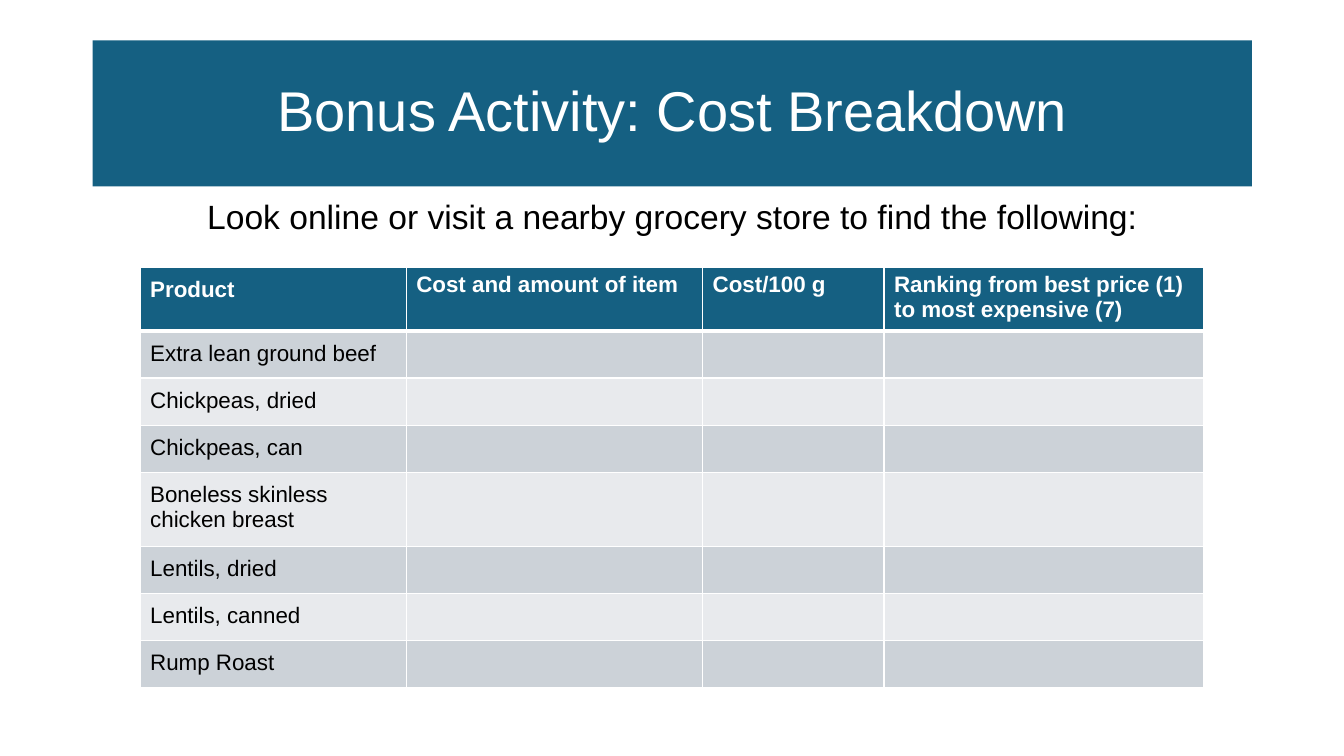
"""Build the grocery cost breakdown slide."""
from dataclasses import dataclass

from lxml import etree
from pptx import Presentation
from pptx.dml.color import RGBColor
from pptx.enum.shapes import MSO_SHAPE
from pptx.enum.text import MSO_ANCHOR, PP_ALIGN
from pptx.oxml.ns import qn
from pptx.util import Pt

RECT = MSO_SHAPE.RECTANGLE
TOP, MIDDLE = MSO_ANCHOR.TOP, MSO_ANCHOR.MIDDLE
CENTER = PP_ALIGN.CENTER
FONT = "Arial"
TEAL, WHITE, BLACK = "156082", "FFFFFF", "000000"
BANDS = ("CCD2D8", "E8EAED")
PAD = 7.2
ROW = 29.5
WIDTHS = (190.1, 211.7, 129.6, 228.2)
HEADS = (
    "Product",
    "Cost and amount of item",
    "Cost/100 g",
    "Ranking from best price (1) to most expensive (7)",
)
FOODS = (
    "Extra lean ground beef",
    "Chickpeas, dried",
    "Chickpeas, can",
    "Boneless skinless chicken breast",
    "Lentils, dried",
    "Lentils, canned",
    "Rump Roast",
)


@dataclass
class Banner:
    text: str
    left: float
    top: float
    width: float
    height: float
    size: float
    ink: str
    anchor: MSO_ANCHOR
    fill: str = ""


BANNERS = (
    Banner("Bonus Activity: Cost Breakdown",
           66.2, 28.8, 828, 104.4, 40, WHITE, MIDDLE, TEAL),
    Banner("Look online or visit a nearby grocery store to find the following:",
           84.2, 139.7, 792, 45.4, 24, BLACK, TOP),
)


def color(code: str) -> RGBColor:
    return RGBColor.from_string(code)


def style(frame, size: float, ink: str, bold: bool = False) -> None:
    for run in frame.paragraphs[0].runs:
        font = run.font
        font.name, font.size, font.bold = FONT, Pt(size), bold
        font.color.rgb = color(ink)


def add_banner(slide, item: Banner) -> None:
    area = [Pt(n) for n in (item.left, item.top, item.width, item.height)]
    if item.fill:
        shape = slide.shapes.add_shape(RECT, *area)
        shape.shadow.inherit = False
        shape.fill.solid()
        shape.fill.fore_color.rgb = color(item.fill)
        shape.line.fill.background()
    else:
        shape = slide.shapes.add_textbox(*area)
    frame = shape.text_frame
    frame.word_wrap = True
    frame.vertical_anchor = item.anchor
    frame.text = item.text
    line = frame.paragraphs[0]
    line.alignment, line.line_spacing = CENTER, 0.9
    style(frame, item.size, item.ink)


def add_edges(cell, base: float) -> None:
    props = cell._tc.get_or_add_tcPr()
    for side, width in (("L", 1), ("R", 1), ("T", 1), ("B", base)):
        edge = etree.SubElement(props, qn(f"a:ln{side}"), w=str(Pt(width)))
        fill = etree.SubElement(edge, qn("a:solidFill"))
        etree.SubElement(fill, qn("a:srgbClr"), val=WHITE)


def add_cell(cell, text: str, row: int, col: int) -> None:
    head = row == 0
    add_edges(cell, 3 if head else 1)
    cell.fill.solid()
    cell.fill.fore_color.rgb = color(TEAL if head else BANDS[(row - 1) % 2])
    if col == 0:
        cell.margin_top = cell.margin_bottom = Pt(PAD)
    if text:
        cell.text_frame.text = text
        style(cell.text_frame, 16, WHITE if head else BLACK, head)


def add_grid(slide) -> None:
    rows = [HEADS] + [(food, "", "", "") for food in FOODS]
    table = slide.shapes.add_table(
        len(rows), len(WIDTHS), Pt(100.1), Pt(190.8),
        Pt(sum(WIDTHS)), Pt(ROW * len(rows))).table
    for column, width in zip(table.columns, WIDTHS):
        column.width = Pt(width)
    for r, texts in enumerate(rows):
        table.rows[r].height = Pt(ROW)
        for c, text in enumerate(texts):
            add_cell(table.cell(r, c), text, r, c)


def main() -> None:
    deck = Presentation()
    deck.slide_width, deck.slide_height = Pt(960), Pt(540)
    slide = deck.slides.add_slide(deck.slide_layouts[6])
    for item in BANNERS:
        add_banner(slide, item)
    add_grid(slide)
    deck.save("out.pptx")


if __name__ == "__main__":
    main()
